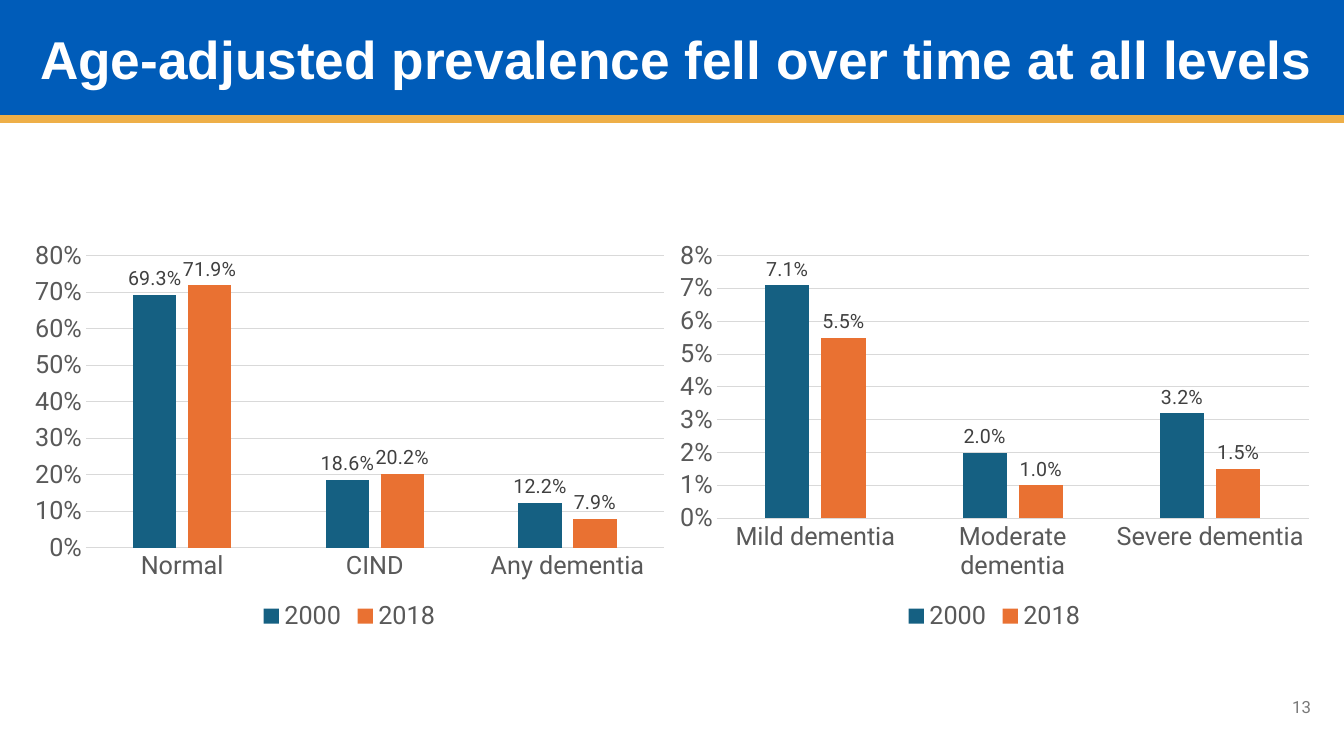
from lxml.etree import SubElement
from pptx import Presentation
from pptx.chart.data import CategoryChartData
from pptx.dml.color import RGBColor
from pptx.enum.chart import XL_CHART_TYPE as ChartType, XL_LABEL_POSITION as LabelPos
from pptx.enum.chart import XL_LEGEND_POSITION as LegendPos, XL_TICK_MARK as Tick
from pptx.enum.shapes import MSO_CONNECTOR as Connector, MSO_SHAPE as Shape
from pptx.enum.text import MSO_ANCHOR as Anchor, MSO_AUTO_SIZE as AutoSize, PP_ALIGN as Align
from pptx.oxml.ns import qn
from pptx.util import Pt

SCALE = 914400 / 100.8  # EMU per px
SLIDE_W, SLIDE_H = 1344, 756
COLORS = {
    "band": "005CB9", "rule": "EEAF48", "title": "FFFFFF", "number": "797979",
    "2000": "156082", "2018": "E97132",
    "text": "000000", "axis": "595959", "label": "404040", "grid": "D9D9D9",
}
FONTS = {
    "title": {"name": "Arial", "size": Pt(38), "bold": True},
    "number": {"name": "Roboto", "size": Pt(12)},
    "text": {"name": "Roboto", "size": Pt(18)},
    "axis": {"name": "Roboto", "size": Pt(18), "bold": False},
    "label": {"name": "Roboto", "size": Pt(14), "bold": False},
}
# Categories, values by year, and the step of the value axis
ALL_LEVELS = (
    ["Normal", "CIND", "Any dementia"],
    {"2000": [0.693, 0.186, 0.122], "2018": [0.719, 0.202, 0.079]},
    0.1,
)
DEMENTIA_LEVELS = (
    ["Mild dementia", "Moderate dementia", "Severe dementia"],
    {"2000": [0.071, 0.02, 0.032], "2018": [0.055, 0.01, 0.015]},
    0.01,
)


def px(*lengths):
    return [round(length * SCALE) for length in lengths]


def color(name):
    return RGBColor.from_string(COLORS[name])


def apply(target, **values):
    for name, value in values.items():
        setattr(target, name, value)


def style_font(font, role):
    apply(font, **FONTS[role])
    font.color.rgb = color(role)


def style_line(line, role, width):
    line.color.rgb = color(role)
    line.width = Pt(width)


def add_header(slide, box, text):
    left, top, width, height = box
    # Blue band
    band = slide.shapes.add_shape(Shape.RECTANGLE, *px(*box))
    band.shadow.inherit = False
    band.fill.solid()
    band.fill.fore_color.rgb = color("band")
    band.line.fill.background()
    # Gold rule along the lower edge
    bottom = top + height
    rule = slide.shapes.add_connector(
        Connector.STRAIGHT, *px(left, bottom, left + width, bottom))
    style_line(rule.line, "rule", 5.5)
    SubElement(rule.element.spPr, qn("a:effectLst"))
    # Title, brought in front of the band
    title = slide.shapes.title
    places = px(left + 30, top + 28, width + 6, 85)
    apply(title, **dict(zip(("left", "top", "width", "height"), places)))
    slide.shapes.element.append(title.element)
    frame = title.text_frame
    apply(frame, text=text, word_wrap=True, auto_size=AutoSize.NONE,
          vertical_anchor=Anchor.TOP)
    heading = frame.paragraphs[0]
    apply(heading, alignment=Align.LEFT, line_spacing=0.9)
    style_font(heading.runs[0].font, "title")


def add_prevalence_chart(slide, box, levels):
    categories, prevalence, step = levels
    data = CategoryChartData(number_format="0.0%")
    data.categories = categories
    for year, values in prevalence.items():
        data.add_series(year, values)
    chart = slide.shapes.add_chart(ChartType.COLUMN_CLUSTERED, *px(*box), data).chart
    apply(chart, has_title=False, has_legend=True)
    style_font(chart.font, "text")
    apply(chart.legend, position=LegendPos.BOTTOM, include_in_layout=False)
    style_font(chart.legend.font, "axis")

    # Axes
    level_axis, percent_axis = chart.category_axis, chart.value_axis
    for axis in (level_axis, percent_axis):
        apply(axis, major_tick_mark=Tick.NONE, minor_tick_mark=Tick.NONE)
        style_font(axis.tick_labels.font, "axis")
    style_line(level_axis.format.line, "grid", 0.75)
    percent_axis.format.line.fill.background()
    apply(percent_axis, minimum_scale=0, maximum_scale=8 * step, major_unit=step,
          has_major_gridlines=True)
    style_line(percent_axis.major_gridlines.format.line, "grid", 0.75)
    apply(percent_axis.tick_labels, number_format="0%", number_format_is_linked=False)

    # Columns and their labels
    plot = chart.plots[0]
    apply(plot, gap_width=219, overlap=-27, vary_by_categories=False)
    for columns in plot.series:
        columns.format.fill.solid()
        columns.format.fill.fore_color.rgb = color(columns.name)
        columns.invert_if_negative = False
        labels = columns.data_labels
        apply(labels, show_value=True, position=LabelPos.OUTSIDE_END,
              number_format="0.0%", number_format_is_linked=False)
        style_font(labels.font, "label")


def add_page_number(slide, box, text):
    frame = slide.shapes.add_textbox(*px(*box)).text_frame
    apply(frame, text=text, word_wrap=True, vertical_anchor=Anchor.MIDDLE)
    number = frame.paragraphs[0]
    number.alignment = Align.RIGHT
    style_font(number.runs[0].font, "number")


def main():
    deck = Presentation()
    deck.slide_width, deck.slide_height = px(SLIDE_W, SLIDE_H)
    slide = deck.slides.add_slide(deck.slide_layouts.get_by_name("Title Only"))
    add_header(slide, (0, 0, SLIDE_W, 119),
               "Age-adjusted prevalence fell over time at all levels")
    for left, levels in ((22, ALL_LEVELS), (667, DEMENTIA_LEVELS)):
        add_prevalence_chart(slide, (left, 233, 655, 403), levels)
    add_page_number(slide, (1223, 687, 98, 40), "13")
    deck.save("out.pptx")


if __name__ == "__main__":
    main()
